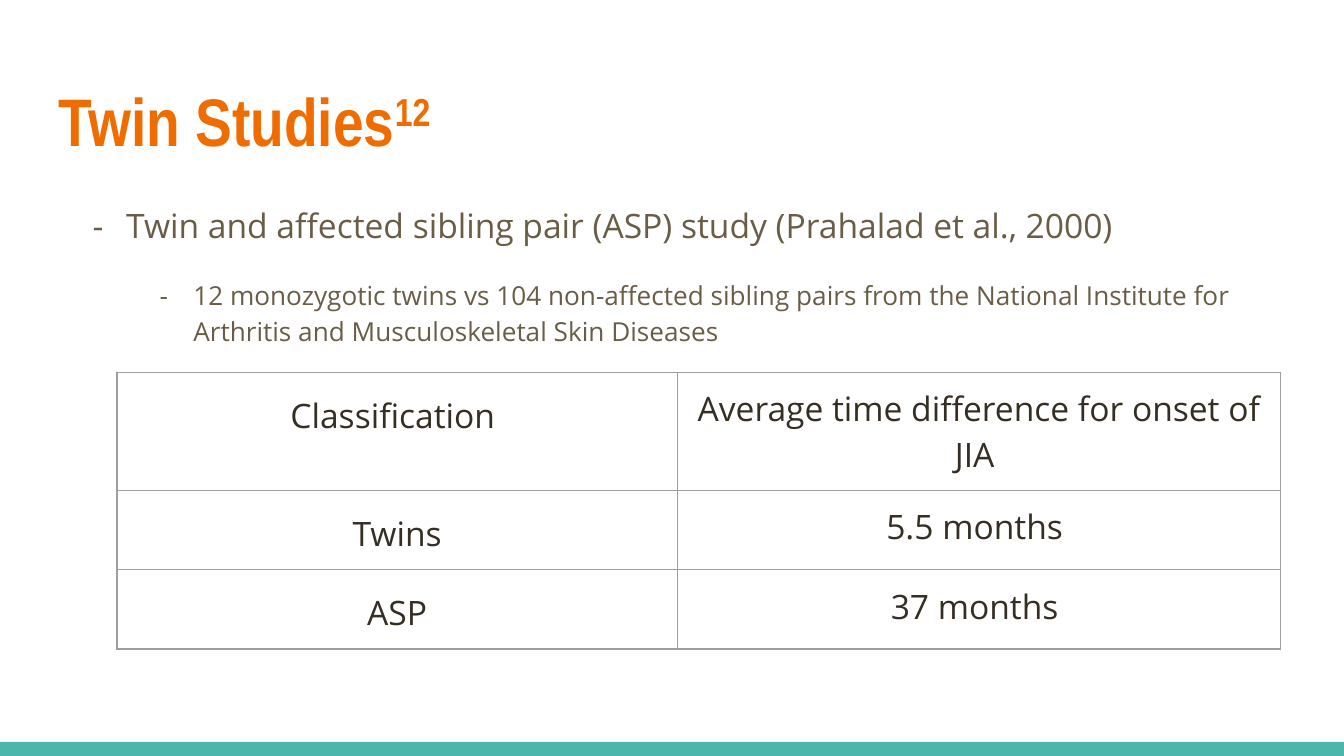
from lxml import etree
from pptx import Presentation
from pptx import util as u
from pptx.dml import color
from pptx.enum import shapes, text
from pptx.oxml import ns

ORANGE, TEAL, BROWN = "EF6C00", "4DB6AC", "695D46"
DARK, GREY = "352E23", "9E9E9E"
WIDTH = 10
HEIGHT = WIDTH * 9 / 16


def rgb(value):
    return color.RGBColor.from_string(value)


def add_xml(parent, tag, **attributes):
    return etree.SubElement(parent, ns.qn(tag), attributes)


class SlideBuilder:
    title_font = "Arial Narrow"
    body_font = "Open Sans"

    def __init__(self, slide):
        self.slide = slide

    def set_font(self, para, size, shade, name=body_font, bold=False):
        para.font.size = u.Pt(size)
        para.font.name = name
        para.font.bold = bold
        para.font.color.rgb = rgb(shade)

    def space(self, para):
        para.line_spacing = 1.15
        para.space_after = u.Pt(16)

    def bar(self, left, top, width, height, shade):
        bar = self.slide.shapes.add_shape(
            shapes.MSO_SHAPE.RECTANGLE, *map(u.Inches, (left, top, width, height)))
        bar.shadow.inherit = False
        bar.fill.solid()
        bar.fill.fore_color.rgb = rgb(shade)
        bar.line.fill.background()

    def text_frame(self, left, top, width, height):
        box = self.slide.shapes.add_textbox(*map(u.Inches, (left, top, width, height)))
        frame = box.text_frame
        frame.word_wrap = True
        frame.margin_left = frame.margin_right = u.Inches(0.1)
        frame.margin_top = frame.margin_bottom = u.Inches(0.1)
        return frame

    def title(self, area, words, superscript):
        para = self.text_frame(*area).paragraphs[0]
        para.add_run().text = words
        span = para.add_run()
        span.text = superscript
        span._r.get_or_add_rPr().set("baseline", "30000")
        self.set_font(para, 36, ORANGE, self.title_font, True)

    def bullets(self, area, items):
        frame = self.text_frame(*area)
        for index, (words, size) in enumerate(items):
            para = frame.add_paragraph() if index else frame.paragraphs[0]
            para.text = words
            para.level = index
            self.space(para)
            props = para._p.get_or_add_pPr()
            props.set("marL", str(u.Inches(0.5 * (index + 1))))
            props.set("indent", str(u.Inches(-0.25)))
            add_xml(add_xml(props, "a:buClr"), "a:srgbClr", val=BROWN)
            add_xml(props, "a:buSzPts", val=str(size * 100))
            add_xml(props, "a:buFont", typeface=self.body_font)
            add_xml(props, "a:buChar", char="-")
            self.set_font(para, size, BROWN)

    def borders(self, cell):
        props = cell._tc.get_or_add_tcPr()
        for side in "LRTB":
            line = add_xml(props, f"a:ln{side}", w=str(u.Pt(0.75)))
            add_xml(add_xml(line, "a:solidFill"), "a:srgbClr", val=GREY)

    def table(self, left, top, widths, heights, rows):
        table = self.slide.shapes.add_table(
            len(rows), len(widths),
            *map(u.Inches, (left, top, sum(widths), sum(heights)))).table
        table.first_row = table.horz_banding = False
        for column, width in zip(table.columns, widths):
            column.width = u.Inches(width)
        for row, height, values in zip(table.rows, heights, rows):
            row.height = u.Inches(height)
            for index, (cell, words) in enumerate(zip(row.cells, values)):
                cell.margin_left = cell.margin_right = u.Inches(0.1)
                cell.margin_top = cell.margin_bottom = u.Inches(0.1)
                self.borders(cell)
                cell.fill.background()
                para = cell.text_frame.paragraphs[0]
                para.text = words
                para.alignment = text.PP_ALIGN.CENTER
                if index == 0:
                    self.space(para)
                self.set_font(para, 18, DARK)


def main():
    deck = Presentation()
    deck.slide_width, deck.slide_height = u.Inches(WIDTH), u.Inches(HEIGHT)
    page = SlideBuilder(deck.slides.add_slide(deck.slide_layouts[6]))
    page.bar(0, 5.52, WIDTH, 0.11, TEAL)
    page.title((0.34, 0.49, 9.32, 0.77), "Twin Studies", "12")
    page.bullets((0.34, 1.38, 9.32, 3.61), [
        ("Twin and affected sibling pair (ASP) study (Prahalad et al., 2000)", 18),
        ("12 monozygotic twins vs 104 non-affected sibling pairs from the National "
         "Institute for Arthritis and Musculoskeletal Skin Diseases", 14),
    ])
    page.table(0.87, 2.77, (4.17, 4.49), (0.88, 0.59, 0.59), [
        ("Classification ", "Average time difference for onset of JIA "),
        ("Twins", "5.5 months "),
        ("ASP", "37 months "),
    ])
    deck.save("out.pptx")


if __name__ == "__main__":
    main()
